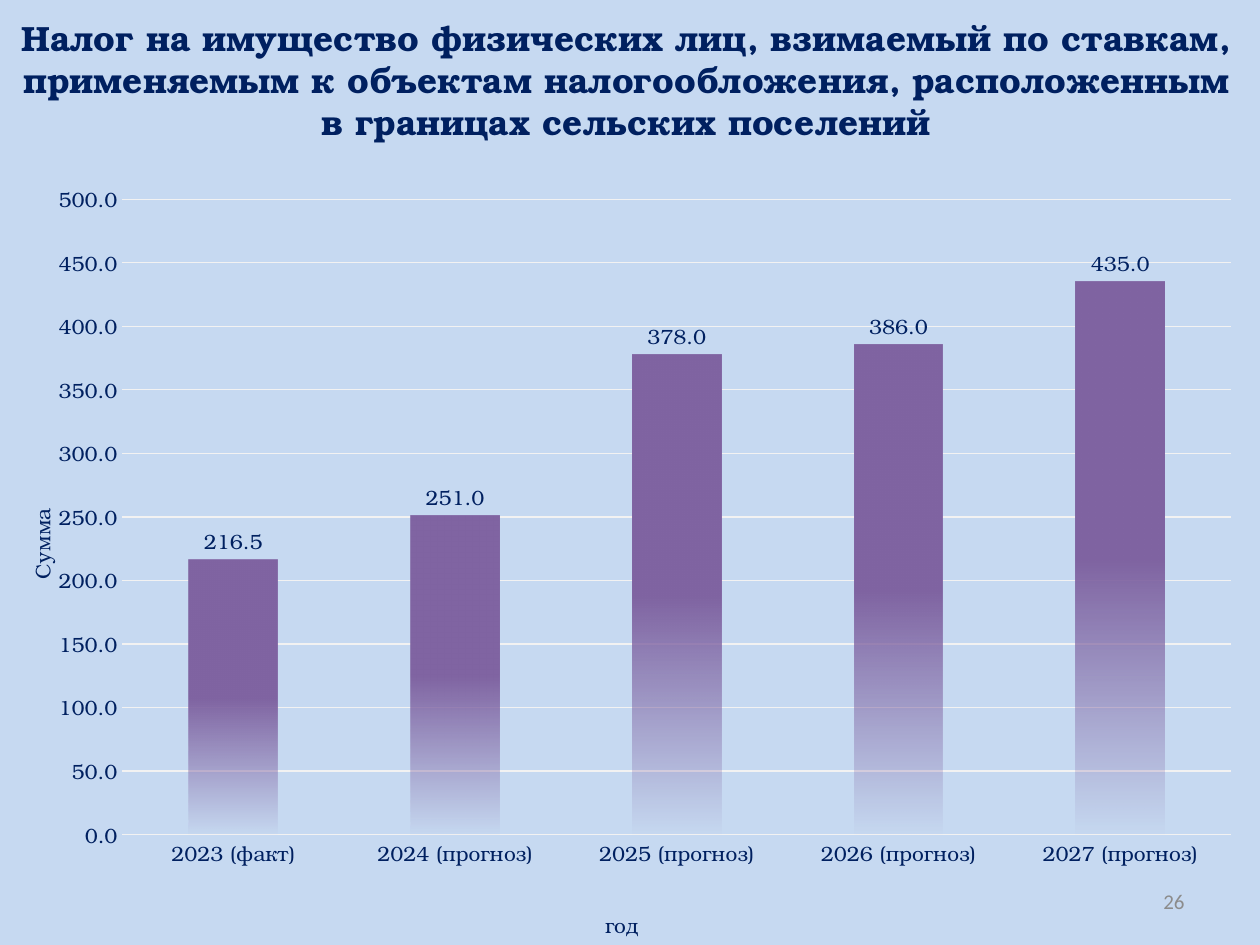
from lxml import etree
from pptx import Presentation
from pptx.chart.data import CategoryChartData
from pptx.dml.color import RGBColor
from pptx.enum.chart import XL_CHART_TYPE, XL_LABEL_POSITION, XL_TICK_MARK
from pptx.enum.text import MSO_ANCHOR, PP_ALIGN
from pptx.oxml import parse_xml
from pptx.oxml.ns import qn
from pptx.util import Pt

COLUMNS = XL_CHART_TYPE.COLUMN_CLUSTERED
OUTSIDE = XL_LABEL_POSITION.OUTSIDE_END
NO_TICK = XL_TICK_MARK.NONE
MIDDLE = MSO_ANCHOR.MIDDLE
CENTER, RIGHT = PP_ALIGN.CENTER, PP_ALIGN.RIGHT

SERIF, SANS = "TeX Gyre Bonum", "Calibri"
NAVY, PURPLE, GRID, SKY, GRAY = "002060", "8064A2", "F2F2F2", "C6D9F1", "8C8C8C"
A_NS = "http://schemas.openxmlformats.org/drawingml/2006/main"

TITLE = ("Налог на имущество физических лиц, взимаемый по ставкам, применяемым "
         "к объектам налогообложения, расположенным в границах сельских поселений")
TAXES = {"2023 (факт)": 216.5, "2024 (прогноз)": 251, "2025 (прогноз)": 378,
         "2026 (прогноз)": 386, "2027 (прогноз)": 435}


def rgb(color):
    return RGBColor.from_string(color)


def set_font(font, size=12, color=NAVY, name=SERIF, bold=False):
    font.size, font.name, font.bold = Pt(size), name, bold
    font.color.rgb = rgb(color)


def add_text(s, box, text, align=CENTER, **fmt):
    tf = s.shapes.add_textbox(*map(Pt, box)).text_frame
    tf.word_wrap = True
    tf.vertical_anchor = MIDDLE
    p = tf.paragraphs[0]
    p.alignment = align
    r = p.add_run()
    r.text = text
    set_font(r.font, **fmt)


def set_layout(parent, index, inner=False, **fractions):
    """Fix the position of a chart part, in fractions of the chart."""
    for old in parent.findall(qn("c:layout")):
        parent.remove(old)
    layout = etree.Element(qn("c:layout"))
    manual = etree.SubElement(layout, qn("c:manualLayout"))
    values = {"layoutTarget": "inner"} if inner else {}
    values.update(xMode="edge", yMode="edge", **fractions)
    for tag, value in values.items():
        etree.SubElement(manual, qn("c:" + tag)).set("val", str(value))
    parent.insert(index, layout)


def style_axis(axis, title, x, y):
    axis.major_tick_mark = axis.minor_tick_mark = NO_TICK
    axis.format.line.fill.background()
    set_font(axis.tick_labels.font)
    tf = axis.axis_title.text_frame
    tf.text = title
    set_font(tf.paragraphs[0].runs[0].font)
    set_layout(axis.axis_title._element, 1, x=x, y=y)


def fade_columns(series):
    """Solid upper half, fading out to transparent at the foot."""
    sp_pr = series.format.fill._xPr
    sp_pr.insert(0, parse_xml(
        f'<a:gradFill xmlns:a="{A_NS}" rotWithShape="1"><a:gsLst>'
        f'<a:gs pos="0"><a:srgbClr val="{PURPLE}"/></a:gs>'
        f'<a:gs pos="50000"><a:srgbClr val="{PURPLE}"/></a:gs>'
        f'<a:gs pos="100000"><a:srgbClr val="{PURPLE}"><a:alpha val="0"/></a:srgbClr></a:gs>'
        '</a:gsLst><a:lin ang="5400000" scaled="0"/></a:gradFill>'))


def add_tax_chart(s, box):
    data = CategoryChartData(number_format="0.0")
    data.categories = list(TAXES)
    data.add_series("Series 1", list(TAXES.values()))
    chart = s.shapes.add_chart(COLUMNS, *map(Pt, box), data).chart
    chart.has_legend = chart.has_title = False
    set_font(chart.font, size=10)
    set_layout(chart._chartSpace.chart.plotArea, 0, inner=True,
               x=0.1, y=0.06, w=0.88, h=0.81)

    # Axes and gridlines
    style_axis(chart.category_axis, "год", x=0.48, y=0.96)
    axis = chart.value_axis
    style_axis(axis, "Сумма", x=0.02, y=0.45)
    axis.minimum_scale, axis.maximum_scale, axis.major_unit = 0, 500, 50
    axis.tick_labels.number_format = "0.0"
    axis.tick_labels.number_format_is_linked = False
    line = axis.major_gridlines.format.line
    line.width = Pt(0.75)
    line.color.rgb = rgb(GRID)

    # Columns and their labels
    plot = chart.plots[0]
    plot.gap_width = 150
    plot.vary_by_categories = False
    fade_columns(plot.series[0])
    plot.has_data_labels = True
    labels = plot.data_labels
    labels.show_value = True
    labels.position = OUTSIDE
    labels.number_format = "0.0"
    labels.number_format_is_linked = False
    set_font(labels.font)


def main():
    prs = Presentation()
    prs.slide_width, prs.slide_height = Pt(720), Pt(540)
    s = prs.slides.add_slide(prs.slide_layouts[6])
    s.background.fill.solid()
    s.background.fill.fore_color.rgb = rgb(SKY)

    add_text(s, (-2, 15, 720, 61), TITLE, size=20, bold=True)
    add_tax_chart(s, (-2, 87, 720, 453))
    add_text(s, (516, 500.5, 168, 29), "26", align=RIGHT, color=GRAY, name=SANS)
    prs.save("out.pptx")


if __name__ == "__main__":
    main()
